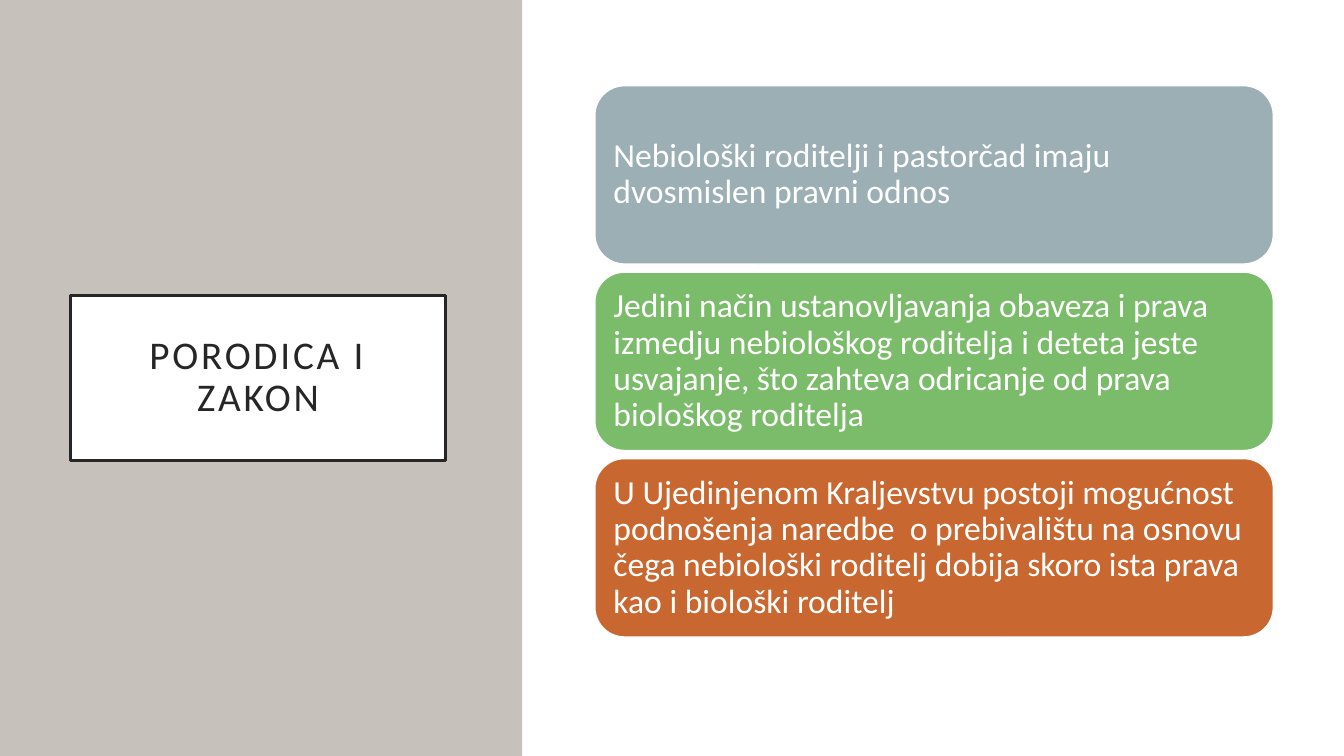
import pptx
import pptx.util
import pptx.dml.color
import pptx.enum.shapes
import pptx.enum.text

RGB = pptx.dml.color.RGBColor
STONE = RGB(0xC6, 0xC1, 0xBA)
WHITE = RGB(0xFF, 0xFF, 0xFF)
INK = RGB(0x26, 0x26, 0x26)
SLATE = RGB(0x9B, 0xAF, 0xB5)
GREEN = RGB(0x7A, 0xBC, 0x69)
RUST = RGB(0xC9, 0x67, 0x31)

COLUMNS, ROWS = 133.3, 75
CARD_TOP, CARD_HEIGHT, CARD_STEP = 8.5, 17.7, 18.5
CARDS = [
    (SLATE, "Nebiološki roditelji i pastorčad imaju dvosmislen pravni odnos"),
    (GREEN, "Jedini način ustanovljavanja obaveza i prava izmedju nebiološkog "
            "roditelja i deteta jeste usvajanje, što zahteva odricanje od prava "
            "biološkog roditelja"),
    (RUST, "U Ujedinjenom Kraljevstvu postoji mogućnost podnošenja naredbe  o "
           "prebivalištu na osnovu čega nebiološki roditelj dobija skoro ista "
           "prava kao i biološki roditelj"),
]


class SlideBuilder:
    """Holds the style and the page, placing elements on a grid of columns and rows."""

    font_name = "Calibri"

    def __init__(self, deck):
        self.page = deck.slides.add_slide(deck.slide_layouts[5])
        self.column = deck.slide_width / COLUMNS
        self.row = deck.slide_height / ROWS

    def area(self, left, top, width, height):
        return (round(left * self.column), round(top * self.row),
                round(width * self.column), round(height * self.row))

    def paint(self, shape, fill, line=None, weight=1):
        shape.fill.solid()
        shape.fill.fore_color.rgb = fill
        if line is None:
            shape.line.fill.background()
        else:
            shape.line.color.rgb = line
            shape.line.width = pptx.util.Pt(weight)

    def set_text(self, shape, text, size, color, align, inset):
        frame = shape.text_frame
        frame.text = text
        frame.word_wrap = True
        frame.auto_size = pptx.enum.text.MSO_AUTO_SIZE.NONE
        frame.vertical_anchor = pptx.enum.text.MSO_ANCHOR.MIDDLE
        frame.margin_left = frame.margin_right = pptx.util.Inches(inset)
        frame.margin_top = frame.margin_bottom = pptx.util.Inches(inset)
        para = frame.paragraphs[0]
        para.alignment = align
        para.line_spacing = 0.9
        para.font.name = self.font_name
        para.font.size = pptx.util.Pt(size)
        para.font.color.rgb = color

    def title(self, text, *place):
        box = self.page.shapes.title
        box.left, box.top, box.width, box.height = self.area(*place)
        self.paint(box, WHITE, INK, 2.5)
        self.set_text(box, text, 28, INK, pptx.enum.text.PP_ALIGN.CENTER, 0.2)
        for span in box.element.xpath(".//a:r"):
            span.get_or_add_rPr().set("spc", "200")

    def panel(self, fill, *place):
        shape = self.page.shapes.add_shape(
            pptx.enum.shapes.MSO_SHAPE.RECTANGLE, *self.area(*place))
        shape.shadow.inherit = False
        self.paint(shape, fill)
        self.page.shapes.title.element.addprevious(shape.element)

    def card(self, fill, text, *place):
        shape = self.page.shapes.add_shape(
            pptx.enum.shapes.MSO_SHAPE.ROUNDED_RECTANGLE, *self.area(*place))
        shape.shadow.inherit = False
        self.paint(shape, fill, WHITE)
        self.set_text(shape, text, 24, WHITE, pptx.enum.text.PP_ALIGN.LEFT, 0.1)


def main():
    deck = pptx.Presentation()
    deck.slide_width = pptx.util.Inches(13.33)
    deck.slide_height = pptx.util.Inches(7.5)
    builder = SlideBuilder(deck)
    builder.panel(STONE, 0, 0, 51.8, ROWS)
    builder.panel(WHITE, 52, 0, COLUMNS - 52, ROWS)
    builder.title("PORODICA I ZAKON", 7, 29.3, 37.2, 16.4)
    for index, (fill, text) in enumerate(CARDS):
        builder.card(fill, text, 59, CARD_TOP + index * CARD_STEP, 67.3, CARD_HEIGHT)
    deck.save("out.pptx")


if __name__ == "__main__":
    main()
